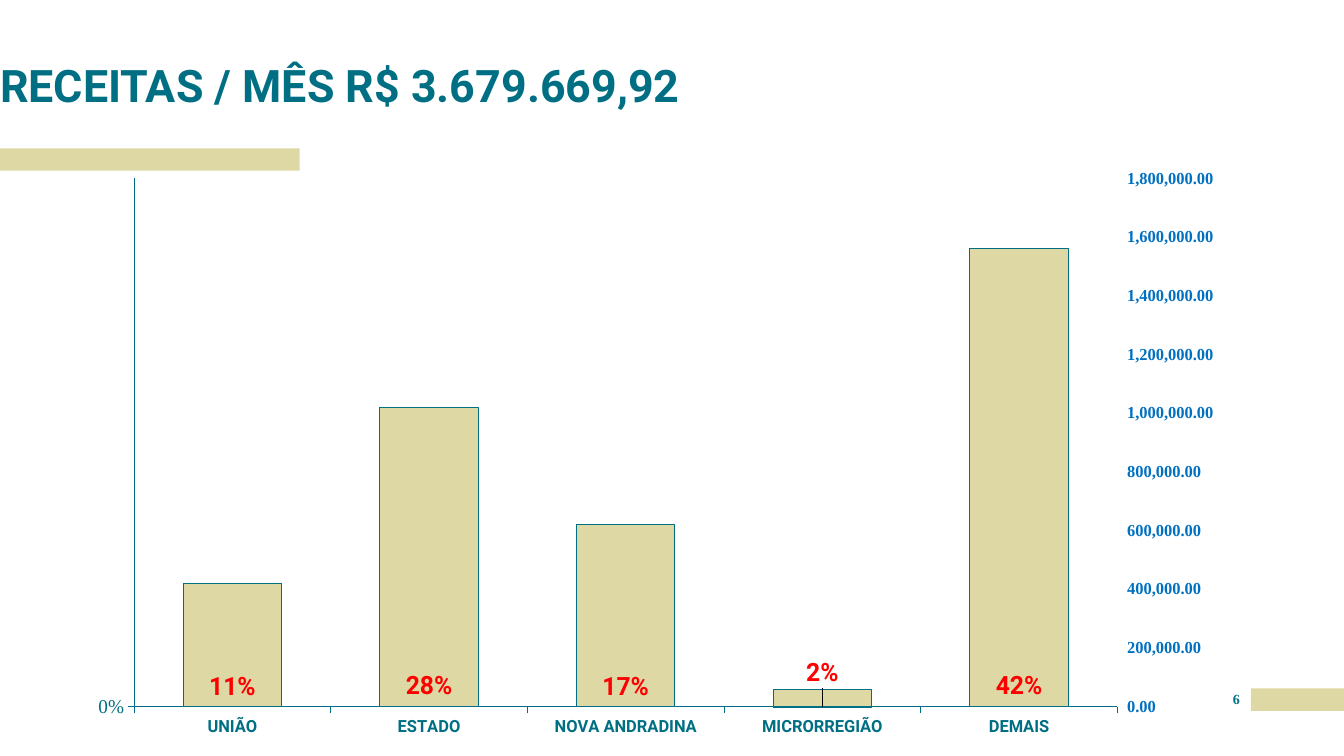
from copy import deepcopy
from dataclasses import dataclass

from lxml.etree import SubElement
from pptx import Presentation
from pptx.chart.axis import ValueAxis
from pptx.chart.data import CategoryChartData
from pptx.dml.color import RGBColor
from pptx.enum.chart import XL_CHART_TYPE, XL_LABEL_POSITION, XL_TICK_MARK
from pptx.enum.shapes import MSO_SHAPE
from pptx.enum.text import MSO_ANCHOR, PP_ALIGN
from pptx.oxml.ns import qn
from pptx.util import Pt


@dataclass(frozen=True)
class Theme:
    teal: RGBColor = RGBColor.from_string("006F83")
    sand: RGBColor = RGBColor.from_string("DED8A4")
    red: RGBColor = RGBColor.from_string("FF0000")
    blue: RGBColor = RGBColor.from_string("0070C0")
    grid: RGBColor = RGBColor.from_string("A5E1E4")
    sans: str = "Roboto"
    serif: str = "Times New Roman"
    title: int = 32
    label: int = 18
    percent_axis: int = 14
    axis: int = 12
    small: int = 10


theme = Theme()


def format_font(font, size, color=theme.teal, name=theme.sans, bold=True):
    font.size, font.name, font.bold = Pt(size), name, bold
    font.color.rgb = color


def add_text(slide, text, box, anchor=MSO_ANCHOR.TOP, align=PP_ALIGN.LEFT,
             line_spacing=1.0, **font_format):
    shape = slide.shapes.add_textbox(*map(Pt, box))
    frame = shape.text_frame
    frame.word_wrap = True
    frame.vertical_anchor = anchor
    frame.margin_left = frame.margin_right = frame.margin_top = frame.margin_bottom = 0
    paragraph = frame.paragraphs[0]
    paragraph.alignment, paragraph.line_spacing = align, line_spacing
    run = paragraph.add_run()
    run.text = text
    format_font(run.font, **font_format)


presentation = Presentation()
presentation.slide_width, presentation.slide_height = Pt(960), Pt(540)
slide = presentation.slides.add_slide(presentation.slide_layouts[6])

# Accent bars
for box in [(893.5, 491.8, 66.5, 16), (0, 106, 214, 16)]:
    shape = slide.shapes.add_shape(MSO_SHAPE.RECTANGLE, *map(Pt, box))
    shape.shadow.inherit = False
    shape.fill.solid()
    shape.fill.fore_color.rgb = theme.sand
    shape.line.fill.background()

# Title
add_text(slide, "RECEITAS / MÊS R$ 3.679.669,92", (0, 33, 614, 47),
         anchor=MSO_ANCHOR.BOTTOM, line_spacing=0.9, size=theme.title)

# Chart data
chart_data = CategoryChartData()
chart_data.categories = ["UNIÃO", "ESTADO", "NOVA ANDRADINA", "MICRORREGIÃO", "DEMAIS"]
chart_data.add_series("Series 1", (0.11, 0.28, 0.17, 0.02, 0.42), "0%")
chart_data.add_series("Series 2", (420000, 1020000, 620000, 60000, 1560000), "#,##0.00")
chart = slide.shapes.add_chart(XL_CHART_TYPE.COLUMN_CLUSTERED, Pt(23), Pt(114.5),
                               Pt(844), Pt(417), chart_data).chart
chart.has_legend = chart.has_title = False
format_font(chart.font, theme.small, name=theme.serif, bold=False)

# Second plot on its own pair of axes
category_axis, percent_axis = chart.category_axis, chart.value_axis
share_bars = chart.plots[0]._element
plot_area = share_bars.getparent()
amount_bars = deepcopy(share_bars)
share_bars.remove(share_bars.findall(qn("c:ser"))[1])
amount_bars.remove(amount_bars.findall(qn("c:ser"))[0])
share_bars.addnext(amount_bars)
hidden_axis = deepcopy(category_axis._element)
amount_axis_element = deepcopy(percent_axis._element)
percent_axis._element.addnext(amount_axis_element)
amount_axis_element.addnext(hidden_axis)
category_id, amount_id = "5001", "5002"
for element, own, other in [(hidden_axis, category_id, amount_id),
                            (amount_axis_element, amount_id, category_id)]:
    element.find(qn("c:axId")).set("val", own)
    element.find(qn("c:crossAx")).set("val", other)
for element, own in zip(amount_bars.findall(qn("c:axId")), (category_id, amount_id)):
    element.set("val", own)
hidden_axis.find(qn("c:delete")).set("val", "1")
amount_axis_element.find(qn("c:axPos")).set("val", "r")
amount_axis_element.find(qn("c:crosses")).set("val", "max")
amount_axis = ValueAxis(amount_axis_element)

# Axes
for axis in (category_axis, percent_axis, amount_axis):
    axis.major_tick_mark, axis.minor_tick_mark = XL_TICK_MARK.OUTSIDE, XL_TICK_MARK.NONE
    axis.format.line.color.rgb = theme.teal
    axis.format.line.width = Pt(0.75)
format_font(category_axis.tick_labels.font, theme.axis)

percent_axis.minimum_scale, percent_axis.maximum_scale = 0, 100
percent_axis.major_unit = 10000
percent_axis.major_gridlines.format.line.color.rgb = theme.grid
percent_axis.major_gridlines.format.line.width = Pt(0.75)
percent_axis.tick_labels.number_format = "0%"
percent_axis.tick_labels.number_format_is_linked = False
format_font(percent_axis.tick_labels.font, theme.percent_axis, name=theme.serif, bold=False)

amount_axis.has_major_gridlines = False
amount_axis.minimum_scale, amount_axis.maximum_scale = 0, 1800000
amount_axis.major_unit = 200000
amount_axis.format.line.fill.background()
amount_axis.tick_labels.number_format = "#,##0.00"
amount_axis.tick_labels.number_format_is_linked = False
format_font(amount_axis.tick_labels.font, theme.axis, theme.blue, theme.serif)

# Columns
for plot, color in zip(chart.plots, (theme.teal, theme.sand)):
    plot.gap_width, plot.overlap, plot.vary_by_categories = 100, 100, False
    series = plot.series[0]
    series.format.fill.solid()
    series.format.fill.fore_color.rgb = color
amount_line = chart.plots[1].series[0].format.line
amount_line.color.rgb = theme.teal
amount_line.width = Pt(0.75)

# Share labels, with the one for the shortest column raised
share_series = chart.plots[0].series[0]
labels = share_series.data_labels
labels.show_value = True
labels.number_format, labels.number_format_is_linked = "0%", False
raised_label = share_series.points[3].data_label
for label in (labels, raised_label):
    label.position = XL_LABEL_POSITION.OUTSIDE_END
    format_font(label.font, theme.label, theme.red)
raised_element = labels._element.find(qn("c:dLbl"))

# Manual layout of the plot area and the raised label
for old_layout in plot_area.findall(qn("c:layout")):
    plot_area.remove(old_layout)
for parent, index, settings in [
    (plot_area, 0, {"layoutTarget": "inner", "xMode": "edge", "yMode": "edge",
                    "x": 0.088, "y": 0.031, "w": 0.849, "h": 0.905}),
    (raised_element, 1, {"x": 0, "y": -0.025}),
]:
    layout = SubElement(parent, qn("c:layout"))
    parent.insert(index, layout)
    manual = SubElement(layout, qn("c:manualLayout"))
    for tag, value in settings.items():
        SubElement(manual, qn(f"c:{tag}")).set("val", str(value))

# Slide number
add_text(slide, "6", (872.6, 493.2, 21, 18), align=PP_ALIGN.CENTER,
         size=theme.small, name=theme.serif)

presentation.save("out.pptx")
